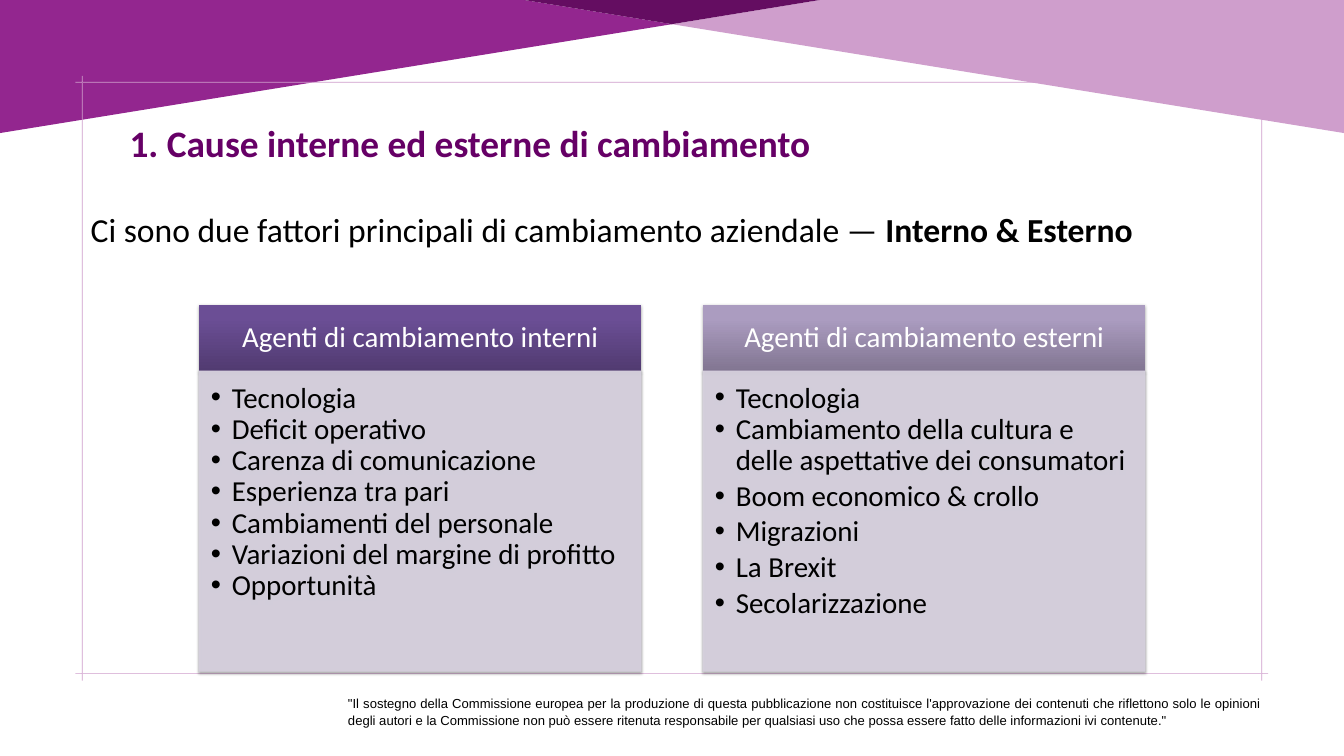
from lxml import etree
from pptx import Presentation
from pptx.dml.color import RGBColor
from pptx.enum.shapes import MSO_SHAPE
from pptx.enum.text import MSO_ANCHOR, PP_ALIGN
from pptx.oxml import parse_xml
from pptx.oxml.ns import nsdecls, qn
from pptx.util import Inches, Pt

RECT = MSO_SHAPE.RECTANGLE
TOP, MIDDLE = MSO_ANCHOR.TOP, MSO_ANCHOR.MIDDLE
LEFT, CENTER, JUSTIFY = PP_ALIGN.LEFT, PP_ALIGN.CENTER, PP_ALIGN.JUSTIFY

# Content
TITLE = "1. Cause interne ed esterne di cambiamento"
LEAD = ("Ci sono due fattori principali di cambiamento aziendale — ",
        "Interno & Esterno")
NOTE = ("\"Il sostegno della Commissione europea per la produzione di questa "
        "pubblicazione non costituisce l'approvazione dei contenuti che "
        "riflettono solo le opinioni degli autori e la Commissione non può "
        "essere ritenuta responsabile per qualsiasi uso che possa essere "
        "fatto delle informazioni ivi contenute.\"")
# Heading, gradient from bottom to top, items, first item with space before
CARDS = [
    ("Agenti di cambiamento interni", ("513B71", "6B4E95", "6B4D96"),
     ["Tecnologia", "Deficit operativo", "Carenza di comunicazione",
      "Esperienza tra pari", "Cambiamenti del personale",
      "Variazioni del margine di profitto", "Opportunità"], 7),
    ("Agenti di cambiamento esterni", ("827692", "AB9CC0", "AC9DC1"),
     ["Tecnologia",
      "Cambiamento della cultura e delle aspettative dei consumatori",
      "Boom economico & crollo", "Migrazioni", "La Brexit",
      "Secolarizzazione"], 2),
]
HEX = {"purple": "93268F", "pink": "CF9ECC", "dark": "640D61",
       "title": "660066", "panel": "D7D1DF", "black": "000000",
       "white": "FFFFFF"}
BANNER = [
    ("purple", [(0, 1.98), (0, 0), (7.8, 0), (10, 0.36)]),
    ("pink", [(20, 1.98), (10, 0.36), (12.2, 0), (20, 0)]),
    ("dark", [(10, 0.36), (7.8, 0), (12.2, 0)]),
]

prs = Presentation()
prs.slide_width, prs.slide_height = Inches(20), Inches(11.25)
slide = prs.slides.add_slide(prs.slide_layouts[6])
shapes = slide.shapes


def rgb(name):
    return RGBColor.from_string(HEX[name])


def draw(loops, color):
    """Fill one or more closed outlines as a single shape."""
    loops = [[(Inches(x), Inches(y)) for x, y in loop] for loop in loops]
    build = shapes.build_freeform(*loops[0][0], scale=1.0)
    for i, loop in enumerate(loops):
        if i:
            build.move_to(*loop[0])
        build.add_line_segments(loop[1:], close=True)
    shape = build.convert_to_shape()
    shape.fill.solid()
    shape.fill.fore_color.rgb = rgb(color)
    shape.line.fill.background()
    shape.shadow.inherit = False


def style(para, size, color="black", face="Calibri", align=LEFT, space=None):
    para.alignment = align
    if space:
        para.line_spacing = space
    for run in para.runs:
        run.font.size = Pt(size)
        run.font.name = face
        run.font.color.rgb = rgb(color)


def add_text(box, parts):
    frame = shapes.add_textbox(*map(Inches, box)).text_frame
    frame.word_wrap = True
    para = frame.paragraphs[0]
    for part in parts:
        para.add_run().text = part
    return para


def add_panel(box, insets, anchor):
    """Rectangle with a soft shadow below it."""
    shape = shapes.add_shape(RECT, *map(Inches, box))
    shape.shadow.inherit = False
    shape.line.fill.background()
    glow = shape._element.spPr.find(qn("a:effectLst"))
    glow.append(parse_xml(
        f'<a:outerShdw {nsdecls("a")} blurRad="{Pt(3.1)}" dist="{Pt(1.8)}" '
        'dir="5400000" rotWithShape="0"><a:srgbClr val="000000">'
        '<a:alpha val="35000"/></a:srgbClr></a:outerShdw>'))
    frame = shape.text_frame
    frame.word_wrap = True
    frame.vertical_anchor = anchor
    (frame.margin_left, frame.margin_top,
     frame.margin_right, frame.margin_bottom) = map(Inches, insets)
    return shape


def shade(shape, colors):
    stops = "".join(f'<a:gs pos="{pos}000"><a:srgbClr val="{c}"/></a:gs>'
                    for pos, c in zip((0, 80, 100), colors))
    shape.fill.background()
    props = shape._element.spPr
    props.replace(props.find(qn("a:noFill")), parse_xml(
        f'<a:gradFill {nsdecls("a")} rotWithShape="1"><a:gsLst>{stops}'
        '</a:gsLst><a:lin ang="16200000" scaled="0"/></a:gradFill>'))


def add_bullet(para):
    props = para._p.get_or_add_pPr()
    props.set("marL", str(Inches(0.31)))
    props.set("indent", str(-Inches(0.31)))
    tint = etree.SubElement(props, qn("a:buClr"))
    etree.SubElement(tint, qn("a:srgbClr"), val=HEX["black"])
    etree.SubElement(props, qn("a:buFont"), typeface="Arial")
    etree.SubElement(props, qn("a:buChar"), char="•")


# Banner
for color, points in BANNER:
    draw([points], color)

# Frame: four hairlines that cross at the corners
bars = [(1.12, y, 17.75, 0.01) for y in (1.22, 10.02)]
bars += [(x, 1.13, 0.01, 9) for x in (1.22, 18.77)]
draw([[(x, y), (x + w, y), (x + w, y + h), (x, y + h)]
      for x, y, w, h in bars], "pink")

# Footer, title and lead
note = add_text((5.08, 10.29, 13.79, 0.52), [NOTE])
style(note, 14, face="Arial", align=JUSTIFY, space=1.07)
title = add_text((1.83, 1.74, 13.25, 0.77), [TITLE])
style(title, 40, "title")
title.runs[0].font.bold = True
lead = add_text((1.25, 3.06, 16.85, 1.18), LEAD)
style(lead, 36)
lead.runs[1].font.bold = True

# Cards
WIDTH, STEP, HEAD = 6.58, 7.5, 0.98
for i, (name, colors, items, loose) in enumerate(CARDS):
    x, y = 2.96 + i * STEP, 4.54
    head = add_panel((x, y, WIDTH, HEAD), (0.24, 0.14, 0.24, 0.14), MIDDLE)
    shade(head, colors)
    head.text_frame.text = name
    style(head.text_frame.paragraphs[0], 31, "white", align=CENTER, space=0.9)

    body = add_panel((x, y + HEAD, WIDTH, 4.47), (0.18, 0.18, 0.24, 0.27), TOP)
    body.fill.solid()
    body.fill.fore_color.rgb = rgb("panel")
    body.line.color.rgb = rgb("panel")
    body.line.width = Pt(0.75)
    for tint in body._element.spPr.iter(qn("a:srgbClr")):
        if tint.get("val") == HEX["panel"]:
            etree.SubElement(tint, qn("a:alpha"), val="90000")
    body.text_frame.text = "\n".join(items)
    for k, para in enumerate(body.text_frame.paragraphs):
        add_bullet(para)
        style(para, 31, space=0.9)
        para.space_before = Pt(4.7 if k >= loose else 0)

prs.save("out.pptx")
